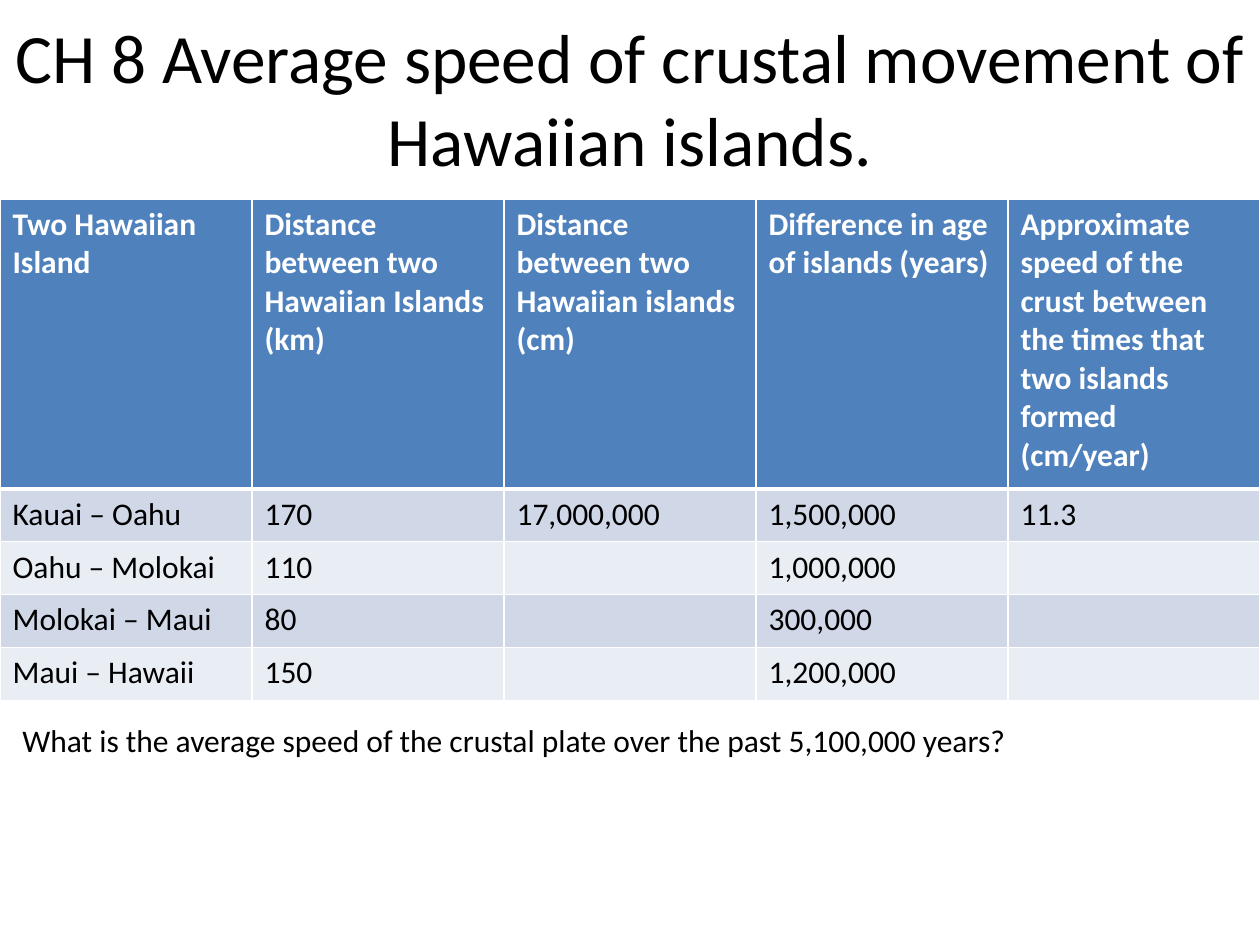
from lxml.etree import SubElement
from pptx import Presentation
from pptx.dml.color import RGBColor
from pptx.enum.text import MSO_ANCHOR, MSO_AUTO_SIZE, PP_ALIGN
from pptx.oxml.ns import qn
from pptx.util import Inches, Pt

# Content
TITLE = "CH 8 Average speed of crustal movement of Hawaiian islands."
HEADERS = [
    "Two Hawaiian Island",
    "Distance between two Hawaiian Islands (km)",
    "Distance between two Hawaiian islands (cm)",
    "Difference in age of islands (years)",
    "Approximate speed of the crust between the times that two islands formed (cm/year)",
]
ISLAND_PAIRS = [
    ("Kauai – Oahu", "170", "17,000,000", "1,500,000", "11.3"),
    ("Oahu – Molokai", "110", "", "1,000,000", ""),
    ("Molokai – Maui", "80", "", "300,000", ""),
    ("Maui – Hawaii", "150", "", "1,200,000", ""),
]
QUESTION = "What is the average speed of the crustal plate over the past 5,100,000 years?"

# Look
COLORS = {"text": "000000", "white": "FFFFFF", "header": "4F81BD",
          "odd": "D0D8E8", "even": "E9EDF4"}
FORMATS = {
    "title": {"size": Pt(39.6), "bold": False, "color": "text"},
    "header": {"size": Pt(18), "bold": True, "color": "white"},
    "body": {"size": Pt(18), "bold": False, "color": "text"},
}
WIDTH, HEIGHT = Inches(10), Inches(7.5)
HEADER_HEIGHT, ROW_HEIGHT = Inches(2.3), Inches(0.42)


def write(frame, text, style):
    frame.text = text
    font = frame.paragraphs[0].font if not text else frame.paragraphs[0].runs[0].font
    values = {"name": "Calibri", **FORMATS[style]}
    font.color.rgb = RGBColor.from_string(COLORS[values.pop("color")])
    for key, value in values.items():
        setattr(font, key, value)


def add_borders(cell, widths):
    props = cell._tc.get_or_add_tcPr()
    for index, (side, points) in enumerate(widths.items()):
        line = props.makeelement(qn(f"a:ln{side}"), {"w": str(Pt(points))})
        fill = SubElement(line, qn("a:solidFill"))
        SubElement(fill, qn("a:srgbClr"), val=COLORS["white"])
        props.insert(index, line)


deck = Presentation()
deck.slide_width, deck.slide_height = WIDTH, HEIGHT
slide = deck.slides.add_slide(deck.slide_layouts[5])

# Title
title = slide.shapes.title
title.left, title.top, title.width, title.height = 0, 0, WIDTH, Inches(1.55)
write(title.text_frame, TITLE, "title")
title.text_frame.auto_size = MSO_AUTO_SIZE.NONE
title.text_frame.vertical_anchor = MSO_ANCHOR.MIDDLE
title.text_frame.paragraphs[0].alignment = PP_ALIGN.CENTER

# Island table
rows = [HEADERS, *ISLAND_PAIRS]
table_height = HEADER_HEIGHT + ROW_HEIGHT * len(ISLAND_PAIRS)
islands = slide.shapes.add_table(len(rows), len(HEADERS), 0, Inches(1.58),
                                 WIDTH, table_height).table
for column in islands.columns:
    column.width = WIDTH // len(HEADERS)
for r, row in enumerate(rows):
    islands.rows[r].height = ROW_HEIGHT if r else HEADER_HEIGHT
    band = "header" if r == 0 else "odd" if r % 2 else "even"
    borders = {"L": 1, "R": 1, "T": 3 if r == 1 else 1, "B": 1 if r else 3}
    for c, text in enumerate(row):
        cell = islands.cell(r, c)
        write(cell.text_frame, text, "body" if r else "header")
        cell.fill.solid()
        cell.fill.fore_color.rgb = RGBColor.from_string(COLORS[band])
        add_borders(cell, borders)

# Closing question
question = slide.shapes.add_textbox(Inches(0.08), Inches(5.67), Inches(9.83), Inches(0.4))
question.text_frame.word_wrap = True
question.text_frame.auto_size = MSO_AUTO_SIZE.SHAPE_TO_FIT_TEXT
write(question.text_frame, QUESTION, "body")

deck.save("out.pptx")
